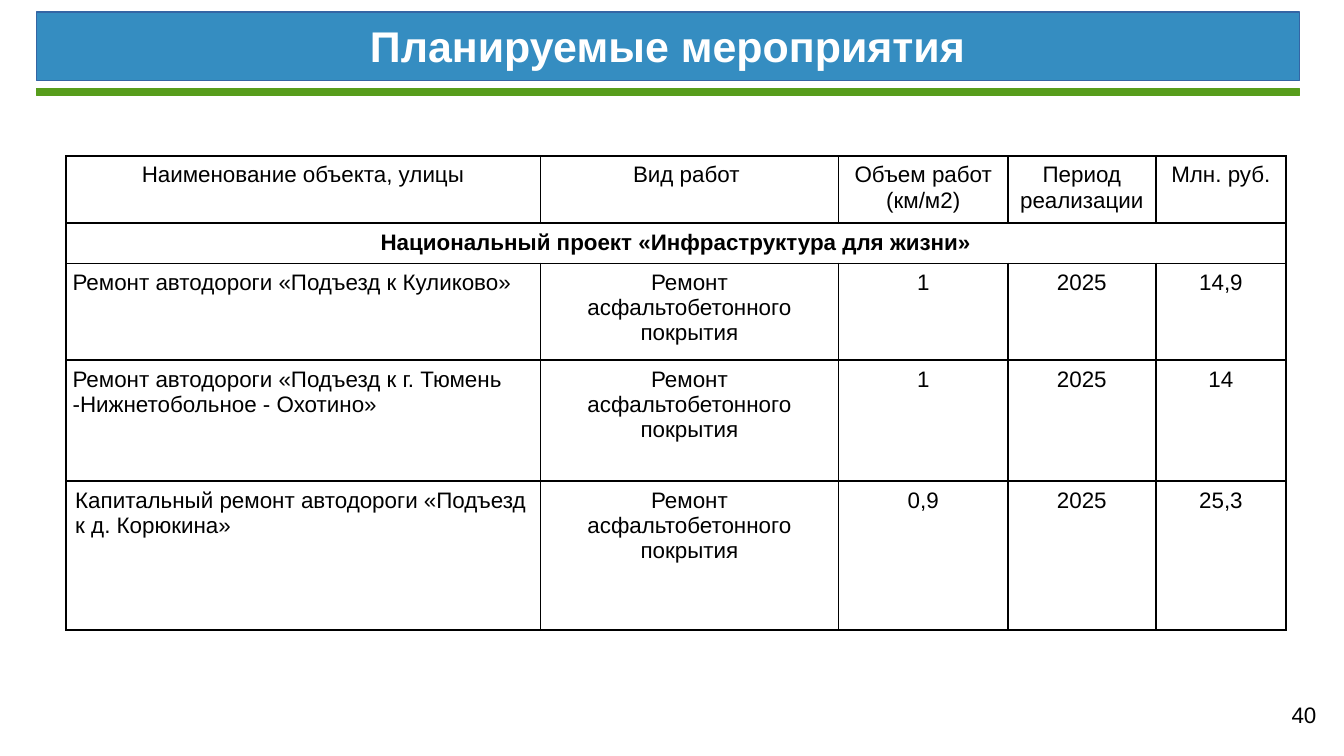
from lxml import etree
from pptx import Presentation
from pptx.dml.color import RGBColor
from pptx.enum.shapes import MSO_SHAPE
from pptx.enum.text import MSO_ANCHOR, PP_ALIGN
from pptx.oxml.ns import qn
from pptx.util import Inches, Pt

LEFT, CENTER = PP_ALIGN.LEFT, PP_ALIGN.CENTER
TOP, MIDDLE = MSO_ANCHOR.TOP, MSO_ANCHOR.MIDDLE
RECT = MSO_SHAPE.RECTANGLE
BLUE = RGBColor(0x35, 0x8D, 0xC1)
EDGE = RGBColor(0x34, 0x65, 0xA4)
GREEN = RGBColor(0x57, 0x9D, 0x1C)
WHITE = RGBColor(0xFF, 0xFF, 0xFF)
BLACK = RGBColor(0, 0, 0)
FONT = "Arial"

# Content
TITLE = "Планируемые мероприятия"
PAGE = "40"
HEAD = ["Наименование объекта, улицы", "Вид работ ", "Объем работ (км/м2)",
        "Период реализации", "Млн. руб."]
GROUP = "Национальный проект «Инфраструктура для жизни»"
WORK = "Ремонт асфальтобетонного покрытия"
YEAR = "2025"
ROADS = [
    ("Ремонт автодороги «Подъезд к Куликово»", "1", "14,9"),
    ("Ремонт автодороги «Подъезд к г. Тюмень -Нижнетобольное - Охотино»", "1", "14"),
    ("Капитальный ремонт автодороги «Подъезд к д. Корюкина»", "0,9", "25,3"),
]
ROWS = [HEAD, [GROUP]] + [[name, WORK, size, YEAR, cost] for name, size, cost in ROADS]
WIDTHS = [3.53, 2.22, 1.26, 1.1, 0.97]
HEIGHTS = [0.5, 0.3, 0.72, 0.9, 1.11]
GROUP_ROW, LAST_ROW = 1, len(ROWS) - 1


def write(frame, text, size, color, align, bold=False):
    frame.text = text
    para = frame.paragraphs[0]
    para.alignment = align
    font = para.runs[0].font
    font.name, font.size, font.bold = FONT, Pt(size), bold
    font.color.rgb = color


def pad(box, side, edge):
    box.margin_left = box.margin_right = Inches(side)
    box.margin_top = box.margin_bottom = Inches(edge)


def paint(shape, fill, line):
    shape.fill.solid()
    shape.fill.fore_color.rgb = fill
    shape.line.color.rgb = line
    shape.line.width = Pt(0.75)


def frame_cell(cell):
    props = cell._tc.get_or_add_tcPr()
    for spot, side in enumerate(("a:lnL", "a:lnR", "a:lnT", "a:lnB")):
        line = etree.Element(qn(side), w=str(Pt(0.96)))
        fill = etree.SubElement(line, qn("a:solidFill"))
        etree.SubElement(fill, qn("a:srgbClr"), val=str(BLACK))
        props.insert(spot, line)


# Wide slide, 16 to 9
deck = Presentation()
deck.slide_width = Inches(10)
deck.slide_height = deck.slide_width * 9 // 16
slide = deck.slides.add_slide(deck.slide_layouts[5])
shapes = slide.shapes

# Title band and green rule
title = shapes.title
title.left, title.top = Inches(0.27), Inches(0.09)
title.width, title.height = Inches(9.4), Inches(0.51)
paint(title, BLUE, EDGE)
write(title.text_frame, TITLE, 23, WHITE, CENTER, True)
pad(title.text_frame, 0.09, 0.04)
title.text_frame.margin_bottom = Inches(0.06)
title.text_frame.vertical_anchor = MIDDLE

rule = shapes.add_shape(RECT, Inches(0.27), Inches(0.66), Inches(9.4), Inches(0.05))
rule.shadow.inherit = False
paint(rule, GREEN, GREEN)

# Table of road works
table = shapes.add_table(len(ROWS), len(WIDTHS), Inches(0.49), Inches(1.16),
                         Inches(sum(WIDTHS)), Inches(sum(HEIGHTS))).table
table.first_row = table.horz_banding = False
for col, width in zip(table.columns, WIDTHS):
    col.width = Inches(width)
for row, height in zip(table.rows, HEIGHTS):
    row.height = Inches(height)
table.cell(GROUP_ROW, 0).merge(table.cell(GROUP_ROW, len(WIDTHS) - 1))

for r, texts in enumerate(ROWS):
    for c, text in enumerate(texts):
        cell = table.cell(r, c)
        align = LEFT if c == 0 and r > GROUP_ROW else CENTER
        write(cell.text_frame, text, 12, BLACK, align, r == GROUP_ROW)
        pad(cell, 0.07 if r == LAST_ROW else 0.05, 0.05)
        cell.vertical_anchor = TOP
for cell in table.iter_cells():
    cell.fill.background()
    frame_cell(cell)

# Page number
page = shapes.add_textbox(Inches(9.53), Inches(5.17), Inches(0.47), Inches(0.39))
page.text_frame.word_wrap = True
write(page.text_frame, PAGE, 12, BLACK, LEFT)
pad(page.text_frame, 0.08, 0.05)

deck.save("out.pptx")
